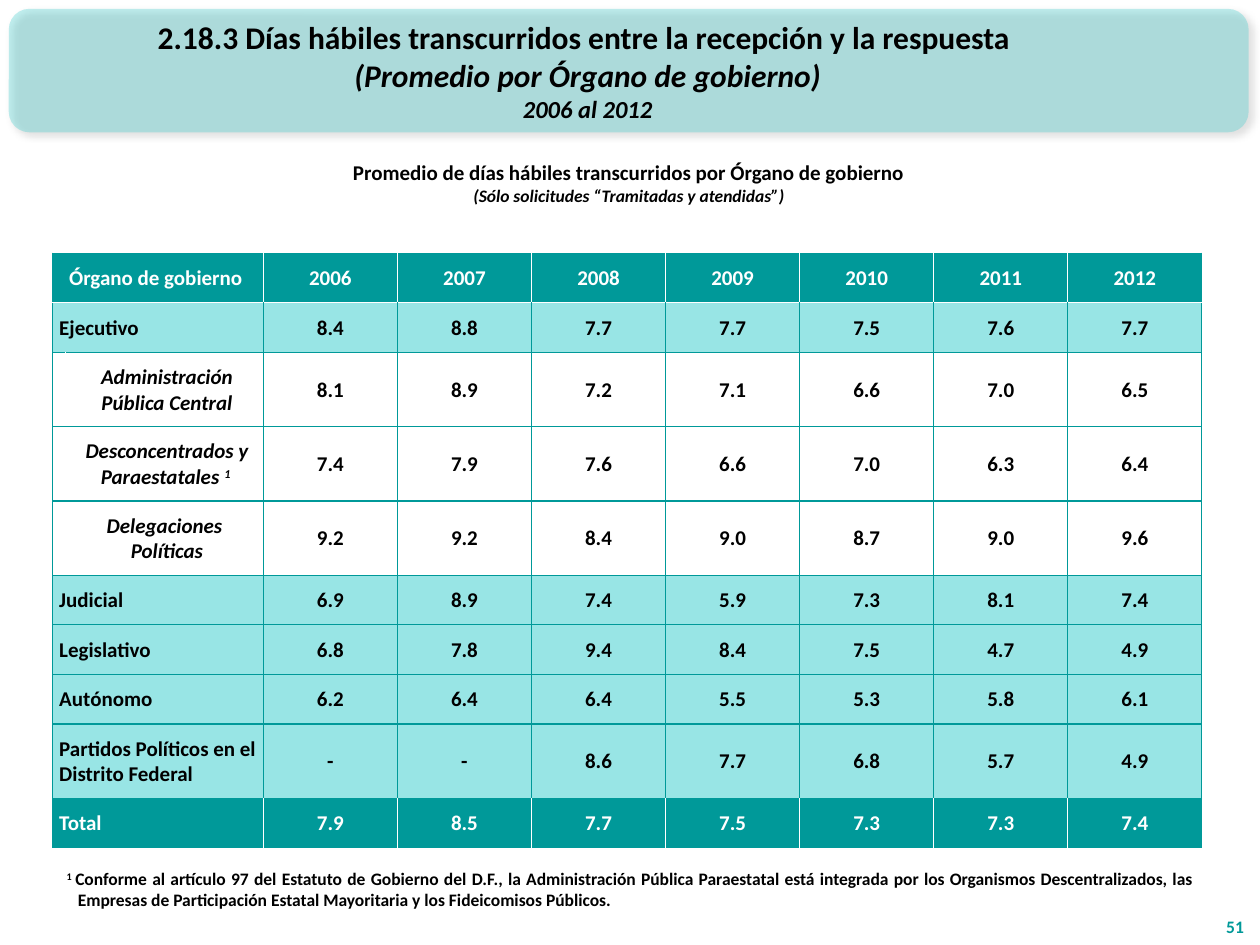
import pptx
import pptx.util
import pptx.oxml
import pptx.oxml.ns
import pptx.dml.color
import pptx.enum.text
import pptx.enum.shapes

Inch = pptx.util.Inches
RGB = pptx.dml.color.RGBColor
Align = pptx.enum.text.PP_ALIGN
Anchor = pptx.enum.text.MSO_ANCHOR

TEAL = RGB(0x00, 0x99, 0x99)
AQUA = RGB(0x33, 0xCC, 0xCC)
WHITE = RGB(0xFF, 0xFF, 0xFF)
BLACK = RGB(0x00, 0x00, 0x00)
FONT = "Calibri"

TITLE = [
    ("2.18.3 Días hábiles transcurridos entre la recepción y la respuesta ", 18, False),
    ("(Promedio por Órgano de gobierno)", 18, True),
    ("2006 al 2012", 14, True),
]
HEADING = [
    ("Promedio de días hábiles transcurridos por Órgano de gobierno", 12, False),
    ("(Sólo solicitudes “Tramitadas y atendidas”)", 10, True),
]
NOTE = (
    "Conforme al artículo 97 del Estatuto de Gobierno del D.F., la Administración Pública "
    "Paraestatal está integrada por los Organismos Descentralizados, las Empresas de "
    "Participación Estatal Mayoritaria y los Fideicomisos Públicos."
)
PAGE = "51"
ROWS = [
    ("head", "Órgano de gobierno ", "2006 2007 2008 2009 2010 2011 2012"),
    ("main", "Ejecutivo", "8.4 8.8 7.7 7.7 7.5 7.6 7.7"),
    ("sub", "Administración\nPública Central", "8.1 8.9 7.2 7.1 6.6 7.0 6.5"),
    ("sub", "Desconcentrados y Paraestatales ", "7.4 7.9 7.6 6.6 7.0 6.3 6.4"),
    ("sub", "Delegaciones \nPolíticas", "9.2 9.2 8.4 9.0 8.7 9.0 9.6"),
    ("main", "Judicial", "6.9 8.9 7.4 5.9 7.3 8.1 7.4"),
    ("main", "Legislativo", "6.8 7.8 9.4 8.4 7.5 4.7 4.9"),
    ("main", "Autónomo", "6.2 6.4 6.4 5.5 5.3 5.8 6.1"),
    ("main", "Partidos Políticos en el\nDistrito Federal", "- - 8.6 7.7 6.8 5.7 4.9"),
    ("total", "Total", "7.9 8.5 7.7 7.5 7.3 7.3 7.4"),
]
MARKED = 3
BOX = (0.42, 2.01, 9.12, 4.72)
NAMES = (0.1, 1.57)


def place(left, top, width, height):
    return Inch(left), Inch(top), Inch(width), Inch(height)


def style(run, size, color=BLACK, italic=False):
    font = run.font
    font.name, font.size = FONT, pptx.util.Pt(size)
    font.bold, font.italic = True, italic
    font.color.rgb = color


def raise_mark(run):
    run._r.get_or_add_rPr().set("baseline", "30000")


def write(frame, lines, align, color=BLACK):
    frame.word_wrap = True
    frame.text = "\n".join(text for text, size, slant in lines)
    for para, (text, size, slant) in zip(frame.paragraphs, lines):
        para.alignment = align
        for run in para.runs:
            style(run, size, color, slant)


def fade(fill, share):
    color = fill._xPr.find(".//" + pptx.oxml.ns.qn("a:srgbClr"))
    alpha = pptx.oxml.parse_xml(
        f'<a:alpha {pptx.oxml.ns.nsdecls("a")} val="{share * 1000}"/>')
    color.append(alpha)


def add_box(slide, area, lines, align, color=BLACK):
    frame = slide.shapes.add_textbox(*place(*area)).text_frame
    write(frame, lines, align, color)
    return frame


def add_banner(slide):
    shape = slide.shapes.add_shape(
        pptx.enum.shapes.MSO_SHAPE.ROUNDED_RECTANGLE, *place(0.07, 0.07, 9.84, 0.98))
    shape.line.fill.background()
    shape.fill.solid()
    shape.fill.fore_color.rgb = AQUA
    fade(shape.fill, 30)
    shape.shadow.inherit = False
    effect = shape._element.spPr.find(pptx.oxml.ns.qn("a:effectLst"))
    effect.append(pptx.oxml.parse_xml(
        f'<a:outerShdw {pptx.oxml.ns.nsdecls("a")} blurRad="50800" dist="38100" '
        'dir="2700000" algn="tl" rotWithShape="0"><a:srgbClr val="000000">'
        '<a:alpha val="40000"/></a:srgbClr></a:outerShdw>'))


def add_title(slide):
    title = slide.shapes.title
    title.left, title.top, title.width, title.height = place(0.08, 0.09, 9.17, 0.94)
    frame = title.text_frame
    write(frame, TITLE, Align.CENTER)
    frame.auto_size = pptx.enum.text.MSO_AUTO_SIZE.NONE
    frame.vertical_anchor = Anchor.MIDDLE
    slide.shapes._spTree.append(title._element)


def edge(cell, sides):
    props = cell._tc.get_or_add_tcPr()
    for spot, (side, color) in enumerate(sides.items()):
        props.insert(spot, pptx.oxml.parse_xml(
            f'<a:ln{side} {pptx.oxml.ns.nsdecls("a")} w="9525"><a:solidFill>'
            f'<a:srgbClr val="{color}"/></a:solidFill></a:ln{side}>'))


def paint(cell, kind):
    if kind == "sub":
        cell.fill.background()
        return
    cell.fill.solid()
    cell.fill.fore_color.rgb = AQUA if kind == "main" else TEAL
    if kind == "main":
        fade(cell.fill, 50)


def upright(kind, col, last):
    if col in (0, last):
        return TEAL
    if kind == "sub":
        return WHITE if col == 1 else TEAL
    return TEAL if kind == "main" else WHITE


def fill_row(table, row, kind, name, values):
    color = WHITE if kind in ("head", "total") else BLACK
    sub = kind == "sub"
    last = len(table.columns)
    if not sub:
        table.cell(row, 0).merge(table.cell(row, 1))
    texts = ["", name] if sub else [name, ""]
    for col, text in enumerate(texts + values.split()):
        cell = table.cell(row, col)
        cell.vertical_anchor = Anchor.MIDDLE
        cell.margin_left = cell.margin_right = cell.margin_top = Inch(0.01)
        cell.margin_bottom = 0
        label = col < 2
        if label and kind != "head":
            cell.margin_left = Inch(0.05)
        left = label and kind in ("main", "total")
        if text:
            lines = [(part, 12, sub and label) for part in text.split("\n")]
            write(cell.text_frame, lines, Align.LEFT if left else Align.CENTER, color)
        paint(cell, kind)
        edge(cell, {
            "L": upright(kind, 0 if label and not sub else col, last),
            "R": upright(kind, 2 if label and not sub else col + 1, last),
            "T": WHITE if row == 1 else TEAL,
            "B": WHITE if row == 0 else TEAL,
        })


def add_grid(slide):
    years = len(ROWS[0][2].split())
    widths = NAMES + ((BOX[2] - sum(NAMES)) / years,) * years
    units = [3 if kind == "sub" or "\n" in name else 2 for kind, name, values in ROWS]
    table = slide.shapes.add_table(len(ROWS), len(widths), *place(*BOX)).table
    table.first_row = table.horz_banding = False
    for col, width in zip(table.columns, widths):
        col.width = Inch(width)
    for row, unit in zip(table.rows, units):
        row.height = Inch(BOX[3] * unit / sum(units))
    for row, (kind, name, values) in enumerate(ROWS):
        fill_row(table, row, kind, name, values)
    mark = table.cell(MARKED, 1).text_frame.paragraphs[0].add_run()
    mark.text = "1 "
    style(mark, 12, BLACK, True)
    raise_mark(mark)


def add_note(slide):
    frame = add_box(slide, (0.43, 6.84, 9.13, 0.46), [("1 ", 10, False)], Align.JUSTIFY)
    para = frame.paragraphs[0]
    raise_mark(para.runs[0])
    run = para.add_run()
    run.text = NOTE
    style(run, 10)
    props = para._p.get_or_add_pPr()
    props.set("marL", str(Inch(0.09)))
    props.set("indent", str(Inch(-0.09)))


def main():
    deck = pptx.Presentation()
    deck.slide_width, deck.slide_height = Inch(10), Inch(7.5)
    slide = deck.slides.add_slide(deck.slide_layouts[5])
    add_banner(slide)
    add_title(slide)
    add_box(slide, (1.93, 1.22, 6.12, 0.49), HEADING, Align.CENTER)
    page = add_box(slide, (9.57, 7.09, 0.4, 0.4), [(PAGE, 10, False)], Align.RIGHT, TEAL)
    page.vertical_anchor = Anchor.BOTTOM
    add_grid(slide)
    add_note(slide)
    deck.save("out.pptx")


if __name__ == "__main__":
    main()
